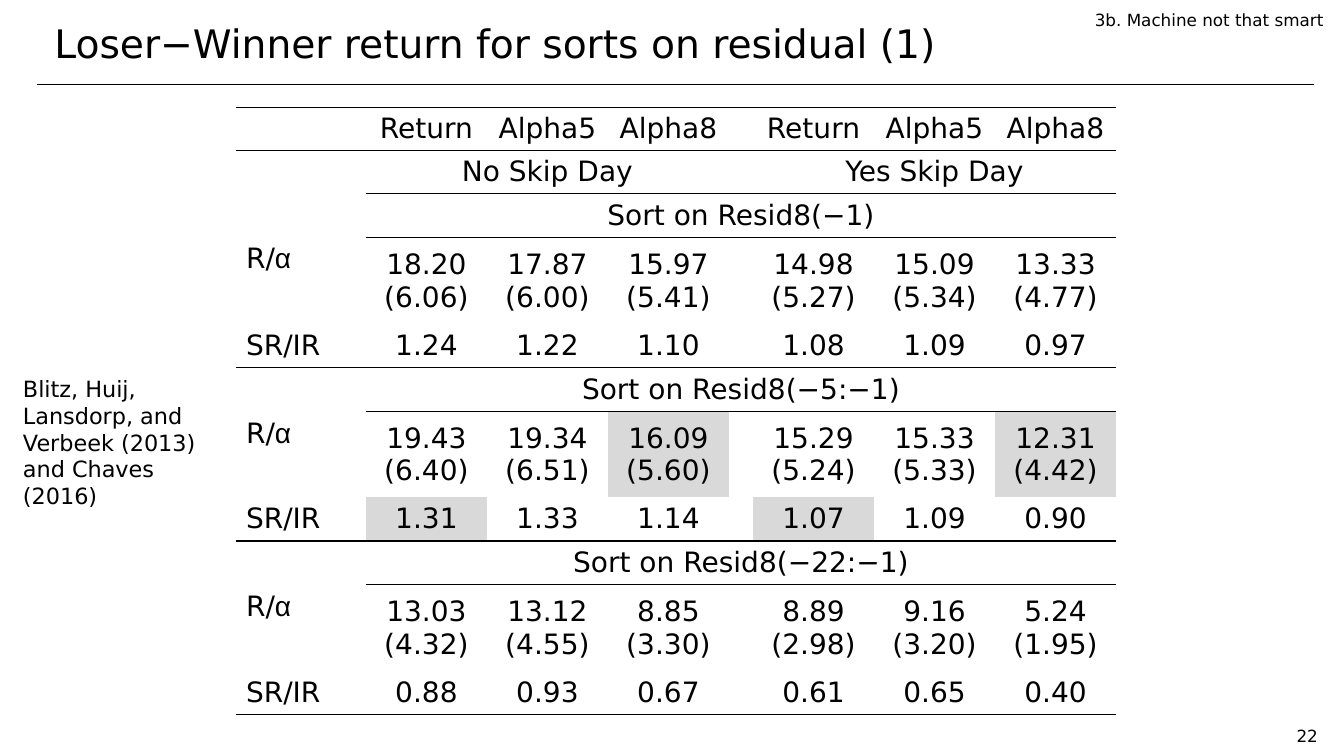
from lxml.etree import SubElement
from pptx import Presentation
from pptx.dml.color import RGBColor
from pptx.enum.shapes import MSO_CONNECTOR as Link
from pptx.enum.text import MSO_ANCHOR as Anchor, MSO_AUTO_SIZE as Fit, PP_ALIGN as Align
from pptx.oxml.ns import qn
from pptx.util import Inches, Pt

FONT, INK, PAPER, SHADE = "DejaVu Sans", "000000", "FFFFFF", "D9D9D9"
WIDTHS = [1.05, 0.23] + [1.2] * 3 + [0.23] + [1.2] * 3
HIGH = 0.42
SPOTS = (2, 3, 4, 6, 7, 8)
HEADS = ["Return", "Alpha5", "Alpha8"] * 2
SORTS = {
    "Sort on Resid8(−1)": [
        "18.20 17.87 15.97 14.98 15.09 13.33",
        "(6.06) (6.00) (5.41) (5.27) (5.34) (4.77)",
        "1.24 1.22 1.10 1.08 1.09 0.97"],
    "Sort on Resid8(−5:−1)": [
        "19.43 19.34 16.09 15.29 15.33 12.31",
        "(6.40) (6.51) (5.60) (5.24) (5.33) (4.42)",
        "1.31 1.33 1.14 1.07 1.09 0.90"],
    "Sort on Resid8(−22:−1)": [
        "13.03 13.12 8.85 8.89 9.16 5.24",
        "(4.32) (4.55) (3.30) (2.98) (3.20) (1.95)",
        "0.88 0.93 0.67 0.61 0.65 0.40"],
}
MARKED = {(7, 4), (8, 4), (7, 8), (8, 8), (9, 2), (9, 6)}
# Rules by row edge, each with its first column
RULES = {0: 0, 1: 0, 2: 2, 3: 2, 6: 0, 7: 2, 10: 0, 11: 2, 14: 0}


def color(code):
    return RGBColor.from_string(code)


def assign(item, values):
    for name, value in values.items():
        setattr(item, name, value)


class Page:
    def __init__(self, deck):
        self.slide = deck.slides.add_slide(deck.slide_layouts[5])
        self.shapes = self.slide.shapes

    def fill(self, frame, runs, size, align=Align.LEFT, **form):
        """Fill a text frame with one paragraph of (text, font) runs."""
        assign(frame, form)
        para = frame.paragraphs[0]
        para.alignment = align
        for text, face in runs:
            run = para.add_run()
            run.text = text
            assign(run.font, {"name": face, "size": Pt(size)})
            run.font.color.rgb = color(INK)

    def title(self, text, box):
        shape = self.shapes.title
        assign(shape, dict(zip(("left", "top", "width", "height"), map(Inches, box))))
        self.fill(shape.text_frame, [(text, FONT)], 28,
                  vertical_anchor=Anchor.MIDDLE, word_wrap=True)

    def text(self, text, box, size, **form):
        frame = self.shapes.add_textbox(*map(Inches, box)).text_frame
        self.fill(frame, [(text, FONT)], size, word_wrap=True, **form)

    def line(self, *ends):
        link = self.shapes.add_connector(Link.STRAIGHT, *map(Inches, ends))
        link.line.color.rgb = color(INK)
        link.line.width = Pt(1)
        SubElement(link._element.spPr, qn("a:effectLst"))

    def grid(self, left, top, rows):
        wide, high = sum(WIDTHS), HIGH * rows
        table = self.shapes.add_table(
            rows, len(WIDTHS), *map(Inches, (left, top, wide, high))).table
        assign(table, {"first_row": False, "horz_banding": False})
        for col, width in zip(table.columns, WIDTHS):
            col.width = Inches(width)
        for row in range(rows):
            table.rows[row].height = Inches(HIGH)
            for col in range(len(WIDTHS)):
                self.dress(table.cell(row, col), row, col)
        return table

    def dress(self, cell, row, col):
        """Give a cell its rules and its fill."""
        props = cell._tc.get_or_add_tcPr()
        edges = {"L": None, "R": None, "T": row, "B": row + 1}
        for side, edge in edges.items():
            ruled = edge in RULES and col >= RULES[edge]
            rule = SubElement(props, qn(f"a:ln{side}"), w=str(Pt(1)))
            paint = SubElement(rule, qn("a:solidFill" if ruled else "a:noFill"))
            if ruled:
                SubElement(paint, qn("a:srgbClr"), val=INK)
        cell.fill.solid()
        cell.fill.fore_color.rgb = color(SHADE if (row, col) in MARKED else PAPER)

    def entry(self, cell, runs, anchor=Anchor.MIDDLE, align=Align.CENTER, tight=False):
        cell.vertical_anchor = anchor
        if tight:
            sides = ("left", "right", "top", "bottom")
            assign(cell, {f"margin_{side}": 0 for side in sides})
        self.fill(cell.text_frame, runs, 20, align)

    def span(self, table, row, first, last, text):
        cell = table.cell(row, first)
        cell.merge(table.cell(row, last))
        self.entry(cell, [(text, FONT)])

    def values(self, table, row, texts, anchor=Anchor.MIDDLE):
        for col, text in zip(SPOTS, texts):
            self.entry(table.cell(row, col), [(text, FONT)], anchor, tight=True)


def main():
    deck = Presentation()
    assign(deck, {"slide_width": Inches(13.33), "slide_height": Inches(7.5)})
    page = Page(deck)
    page.line(0.37, 0.84, 13.03, 0.84)
    page.title("Loser−Winner return for sorts on residual (1)", (0.44, 0.05, 12.42, 0.75))
    page.text("22", (12.44, 7.15, 0.73, 0.3), 12,
              align=Align.RIGHT, vertical_anchor=Anchor.BOTTOM)

    table = page.grid(2.34, 1.07, 14)
    page.values(table, 0, HEADS)
    page.span(table, 1, 2, 4, "No Skip Day")
    page.span(table, 1, 6, 8, "Yes Skip Day")
    anchors = (Anchor.BOTTOM, Anchor.TOP, Anchor.MIDDLE)
    for part, (name, lines) in enumerate(SORTS.items()):
        top = 2 + 4 * part
        page.span(table, top, 2, 8, name)
        page.entry(table.cell(top + 1, 0), [("R/", FONT), ("α", "Arial")],
                   Anchor.BOTTOM if part else Anchor.TOP, Align.LEFT)
        page.entry(table.cell(top + 3, 0), [("SR/IR", FONT)], align=Align.LEFT)
        for row, (line, anchor) in enumerate(zip(lines, anchors), top + 1):
            page.values(table, row, line.split(), anchor)

    page.text("Blitz, Huij, Lansdorp, and Verbeek (2013) and Chaves (2016)",
              (0.13, 3.67, 1.97, 1.45), 16, auto_size=Fit.SHAPE_TO_FIT_TEXT)
    page.text("3b. Machine not that smart", (10.76, 0.05, 2.52, 0.31), 12,
              auto_size=Fit.SHAPE_TO_FIT_TEXT)
    deck.save("out.pptx")


if __name__ == "__main__":
    main()
